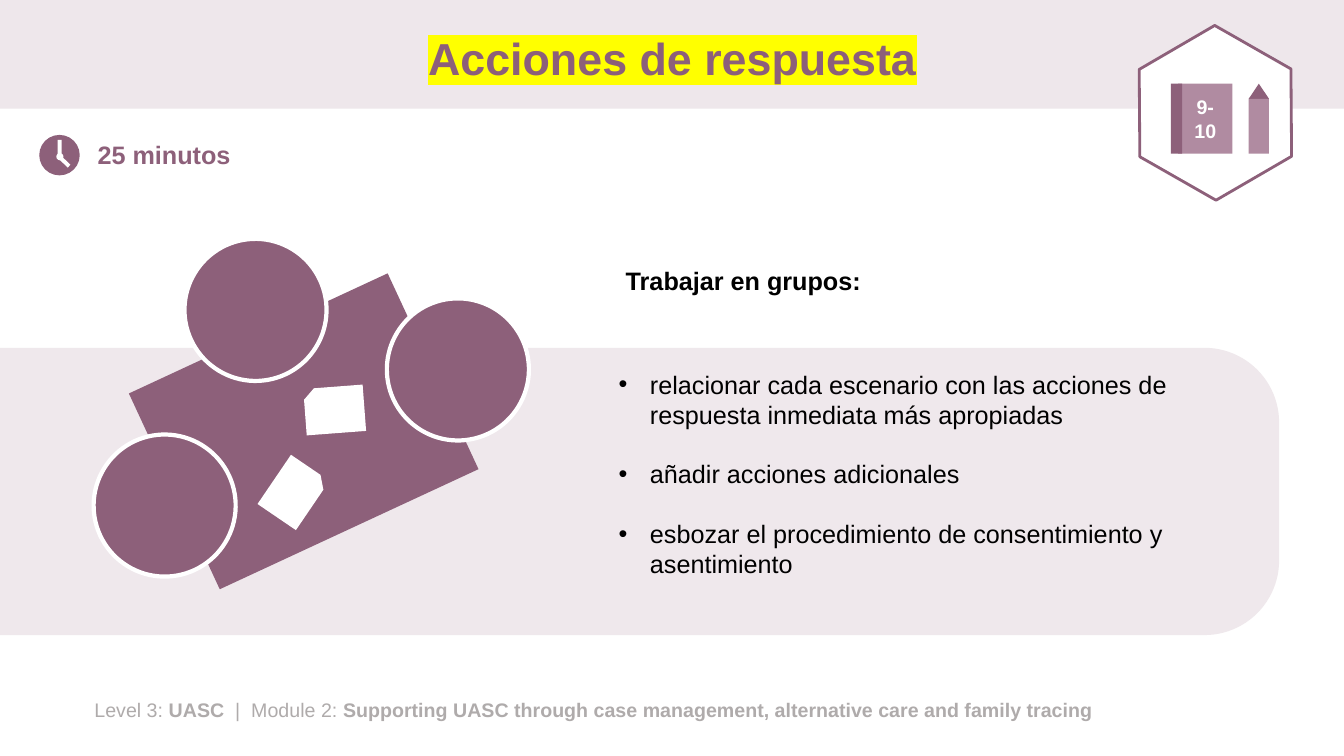
import pptx
import pptx.util
import pptx.dml.color
import pptx.enum.shapes
import pptx.enum.text
import lxml.etree

Cm, Pt = pptx.util.Cm, pptx.util.Pt
KIND = pptx.enum.shapes.MSO_SHAPE
ALIGN = pptx.enum.text.PP_ALIGN
ANCHOR = pptx.enum.text.MSO_ANCHOR

# Content
TITLE = "Acciones de respuesta"
DURATION = "25 minutos"
PAGES = "9-10"
HEADING = "Trabajar en grupos:"
TASKS = [
    "relacionar cada escenario con las acciones de respuesta inmediata más apropiadas",
    "añadir acciones adicionales",
    "esbozar el procedimiento de consentimiento y asentimiento",
]
FOOTER = [
    ("Level 3: ", False),
    ("UASC", True),
    ("  |  Module 2: ", False),
    ("Supporting UASC through case management, alternative care and family tracing", True),
]

# Look
FONT = "Arial"
PLUM, TITLE_PLUM, MAUVE = "8D607A", "8C5F7A", "B08BA1"
BANNER_TINT, PANEL_TINT = "EEE7EB", "EFE8EC"
WHITE, BLACK, GREY, YELLOW = "FFFFFF", "000000", "AFABAB", "FFFF00"
SLIDE_W, SLIDE_H = 33.87, 19.05

# Workshop table: seats and papers in cm
TABLE_TURN = 335.1
SEAT_SIZE = 3.58
SEATS = [(2.36, 10.95), (4.65, 6.02), (9.75, 7.52)]
PAPERS = [(6.81, 11.66, 34.2), (7.85, 9.58, 265.7)]

deck = pptx.Presentation()
deck.slide_width, deck.slide_height = Cm(SLIDE_W), Cm(SLIDE_H)
slide = deck.slides.add_slide(deck.slide_layouts[6])


def color(hex_code):
    return pptx.dml.color.RGBColor.from_string(hex_code)


def draw(kind, left, top, width, height, fill, turn=0, line=None, adjust=()):
    shape = slide.shapes.add_shape(kind, Cm(left), Cm(top), Cm(width), Cm(height))
    shape.shadow.inherit = False
    shape.rotation = turn
    shape.fill.solid()
    shape.fill.fore_color.rgb = color(fill)
    if line:
        line_color, line_width = line
        shape.line.color.rgb = color(line_color)
        shape.line.width = Pt(line_width)
    else:
        shape.line.fill.background()
    for index, value in enumerate(adjust):
        shape.adjustments[index] = value
    return shape


def style(paragraph, size, hex_code, bold=None):
    font = paragraph.font
    font.name, font.size, font.bold = FONT, Pt(size), bold
    font.color.rgb = color(hex_code)


def text_frame(left, top, width, height):
    frame = slide.shapes.add_textbox(Cm(left), Cm(top), Cm(width), Cm(height)).text_frame
    frame.word_wrap = True
    return frame


def write(frame, text, size, hex_code, bold=None):
    paragraph = frame.paragraphs[0]
    paragraph.text = text
    style(paragraph, size, hex_code, bold)
    return paragraph


def add_xml(parent, tag, **attributes):
    return lxml.etree.SubElement(parent, pptx.oxml.ns.qn(tag), attributes)


# Banner and footer
draw(KIND.RECTANGLE, 0, 0, SLIDE_W, 2.74, BANNER_TINT)
footer = text_frame(2.13, 17.45, 28.83, 0.86).paragraphs[0]
style(footer, 14, GREY)
for words, bold in FOOTER:
    part = footer.add_run()
    part.text, part.font.bold = words, bold

# Highlighted title
title_frame = text_frame(2.34, 0.33, 29.21, 2.41)
title_frame.vertical_anchor = ANCHOR.MIDDLE
title = write(title_frame, TITLE, 32, TITLE_PLUM, True)
title.alignment, title.line_spacing = ALIGN.CENTER, 0.9
highlight = add_xml(title.runs[0].font._element, "a:highlight")
add_xml(highlight, "a:srgbClr", val=YELLOW)

# Workbook badge
draw(KIND.HEXAGON, 28.42, 0.94, 4.42, 3.81, WHITE, 29.7, (PLUM, 2), (0.29,))
book = draw(KIND.RECTANGLE, 29.69, 2.11, 1.37, 1.76, MAUVE)
book.text_frame.word_wrap = True
book.text_frame.vertical_anchor = ANCHOR.MIDDLE
write(book.text_frame, PAGES, 14, WHITE, True).alignment = ALIGN.CENTER
draw(KIND.RECTANGLE, 29.51, 2.11, 0.28, 1.76, PLUM)
draw(KIND.ISOSCELES_TRIANGLE, 31.47, 2.11, 0.51, 0.38, PLUM)
draw(KIND.RECTANGLE, 31.47, 2.49, 0.51, 1.38, MAUVE)

# Duration with clock
write(text_frame(2.21, 3.38, 4.34, 1.02), DURATION, 18, PLUM, True)
draw(KIND.OVAL, 0.99, 3.4, 1.02, 1.02, PLUM)
draw(KIND.OVAL, 1.42, 3.86, 0.18, 0.18, WHITE)
draw(KIND.RECTANGLE, 1.3, 3.68, 0.41, 0.1, WHITE, 270)
draw(KIND.RECTANGLE, 1.5, 4.04, 0.28, 0.1, WHITE, 224.2)

# Panel, heading and tasks
draw(KIND.ROUND_2_SAME_RECTANGLE, 12.5, -3.73, 7.24, 32.23, PANEL_TINT, 90,
     adjust=(0.26, 0))
write(text_frame(15.52, 6.55, 15.14, 1.02), HEADING, 18, BLACK, True)
task_frame = text_frame(15.34, 9.17, 15.14, 5.64)
for number, task in enumerate(TASKS):
    item = task_frame.add_paragraph() if number else task_frame.paragraphs[0]
    item.text = task
    item.space_after = Pt(21)
    style(item, 18, BLACK)
    properties = item._p.get_or_add_pPr()
    properties.set("marL", str(Cm(0.79)))
    properties.set("indent", str(-Cm(0.79)))
    bullet_font = add_xml(properties, "a:buFont", typeface=FONT)
    bullet = add_xml(properties, "a:buChar", char="•")
    # Bullet settings come before the default font in the schema
    default_font = properties.find(pptx.oxml.ns.qn("a:defRPr"))
    default_font.addprevious(bullet_font)
    default_font.addprevious(bullet)

# Group around a table
draw(KIND.RECTANGLE, 4.06, 8.15, 7.19, 5.44, PLUM, TABLE_TURN)
for left, top in SEATS:
    draw(KIND.OVAL, left, top, SEAT_SIZE, SEAT_SIZE, PLUM, TABLE_TURN, (WHITE, 3))
for left, top, turn in PAPERS:
    draw(KIND.SNIP_1_RECTANGLE, left, top, 1.17, 1.5, WHITE, turn, adjust=(0.23,))

deck.save("out.pptx")
